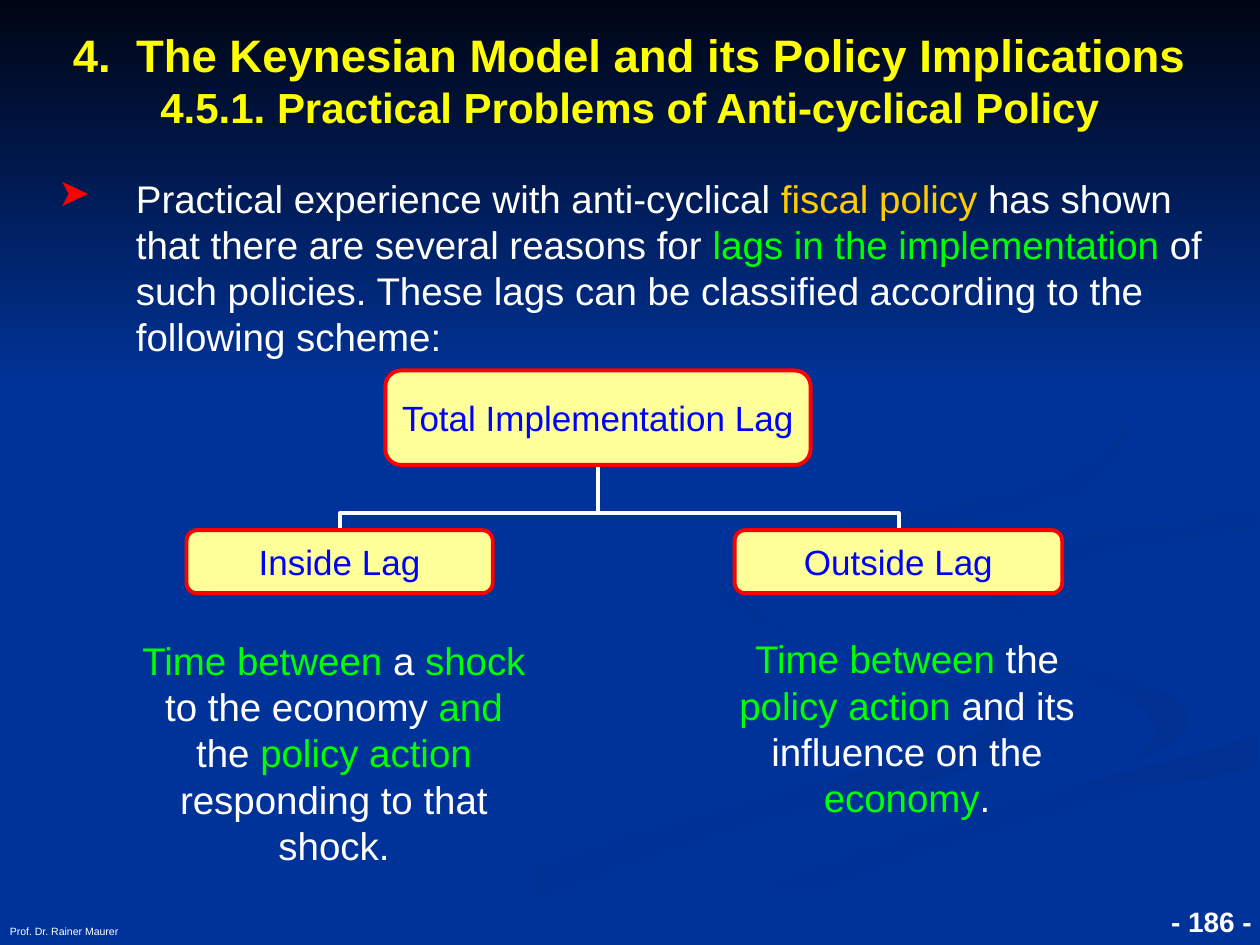
from lxml.etree import SubElement
from pptx import Presentation
from pptx.dml.color import RGBColor
from pptx.enum.shapes import MSO_CONNECTOR as Connector, MSO_SHAPE as Shape
from pptx.enum.text import MSO_ANCHOR as Anchor, PP_ALIGN as Align
from pptx.oxml.ns import qn
from pptx.util import Pt

COLORS = {
    "blue": "003399", "night": "000514", "shade": "003091", "white": "FFFFFF",
    "yellow": "FFFF00", "gold": "FFCC00", "green": "00FF00", "red": "FF0000",
    "cream": "FFFF99", "ink": "0000FF",
}

SWOOSH_EDGE = [(374, 538), (410, 518), (454, 499), (501, 482), (550, 466), (574, 459),
               (624, 446), (674, 433), (703, 425), (719, 418)]
LEFT_TAIL = [
    (562, 398), (545, 391), (526, 384), (491, 374), (462, 365), (442, 357), (428, 349),
    (420, 343), (415, 338), (414, 330), (410, 337), (412, 343), (418, 348), (433, 356),
    (454, 364), (489, 374), (514, 382), (534, 388), (549, 394), (562, 400), (566, 408),
    (562, 417), (552, 423), (532, 431), (503, 438), (469, 446), (417, 460), (359, 476),
    (300, 497), (243, 523), (216, 539), (260, 539), (310, 514), (359, 495), (406, 479),
    (449, 466), (487, 456), (519, 449), (544, 442), (562, 436), (570, 430), (574, 423),
    (576, 418), (572, 408), (566, 400)]
RIGHT_CURL = [
    (679, 410), (676, 405), (670, 398), (652, 389), (626, 382), (598, 374), (570, 366),
    (546, 359), (528, 348), (521, 334), (522, 341), (528, 351), (544, 364), (562, 373),
    (587, 382), (615, 388), (634, 395), (648, 401), (656, 408), (661, 418), (656, 427),
    (644, 436), (660, 430), (671, 424), (678, 418)]
LOWER_BAND = [
    (362, 539), (411, 539), (432, 528), (454, 518), (482, 505), (520, 491), (565, 476),
    (620, 461), (683, 446), (719, 438), *reversed(SWOOSH_EDGE)]
MAIN_BAND = [
    (522, 334), (528, 348), (546, 359), (571, 366), (598, 374), (627, 382), (652, 389),
    (670, 398), (676, 405), (679, 410), (678, 417), (670, 425), (656, 432), (634, 438),
    (607, 445), (562, 456), (507, 472), (446, 492), (379, 521), (343, 539), (362, 539),
    *SWOOSH_EDGE, (719, 387), (690, 382), (651, 374), (611, 362), (588, 354), (572, 346),
    (564, 338), (562, 333), (566, 326), (576, 318), (592, 312), (623, 305), (672, 299),
    (719, 289), (719, 279), (678, 287), (629, 294), (598, 299), (567, 304), (544, 311),
    (527, 321)]
UPPER_BAND = [
    (562, 331), (563, 338), (570, 344), (580, 351), (595, 357), (585, 351), (580, 343),
    (580, 337), (588, 330), (607, 323), (632, 316), (674, 309), (699, 305), (719, 302),
    (719, 289), (672, 299), (623, 305), (592, 312), (576, 318), (566, 326)]
TOP_CURL = [
    (492, 310), (532, 303), (566, 297), (594, 289), (616, 282), (631, 272), (640, 261),
    (644, 248), (641, 233), (634, 221), (622, 210), (607, 198), (583, 184), (562, 174),
    (549, 168), (580, 183), (609, 201), (626, 215), (635, 225), (640, 241), (638, 251),
    (631, 259), (620, 266), (606, 272), (589, 278), (549, 287), (507, 294), (467, 302),
    (443, 309), (424, 318), (416, 328), (418, 341), (429, 351), (448, 360), (437, 353),
    (428, 342), (429, 332), (436, 325), (449, 320), (467, 314)]


def rgb(name):
    """Return the named colour."""
    return RGBColor.from_string(COLORS[name])


def write(paragraph, text, size=22, color="white", bold=False):
    """Add one formatted run to a paragraph."""
    run = paragraph.add_run()
    run.text = text
    run.font.name = "Arial"
    run.font.size = Pt(size)
    run.font.bold = bold
    run.font.color.rgb = rgb(color)


class Canvas:
    """Hold the style and the slide being drawn."""

    def __init__(self, slide):
        self.slide = slide
        self.shapes = slide.shapes
        self.line_width = Pt(2.25)
        background = slide.background.fill
        background.solid()
        background.fore_color.rgb = rgb("blue")

    def paint(self, shape, stops, angle):
        """Fill a lineless shape with a solid colour or a gradient."""
        shape.shadow.inherit = False
        shape.line.fill.background()
        if len(stops) == 1:
            shape.fill.solid()
            shape.fill.fore_color.rgb = rgb(stops[0])
            return
        shape.fill.gradient()
        shape.fill.gradient_angle = 360 - angle
        for stop, name in zip(shape.fill.gradient_stops, stops):
            stop.color.rgb = rgb(name)

    def swoosh(self, points, *stops, angle=0):
        """Draw a closed outline of the backdrop."""
        builder = self.shapes.build_freeform(*points[0], scale=Pt(1))
        builder.add_line_segments(points[1:])
        self.paint(builder.convert_to_shape(), stops, angle)

    def band(self, left, top, width, height, *stops, angle=90):
        """Draw a gradient rectangle."""
        box = map(Pt, (left, top, width, height))
        self.paint(self.shapes.add_shape(Shape.RECTANGLE, *box), stops, angle)

    def text(self, box, align=Align.LEFT, anchor=Anchor.TOP, margins=(7.2, 3.6)):
        """Add a text box and return its first paragraph."""
        frame = self.shapes.add_textbox(*map(Pt, box)).text_frame
        frame.word_wrap = True
        frame.vertical_anchor = anchor
        frame.margin_left = frame.margin_right = Pt(margins[0])
        frame.margin_top = frame.margin_bottom = Pt(margins[1])
        paragraph = frame.paragraphs[0]
        paragraph.alignment = align
        return paragraph

    def bullet(self, paragraph, indent, character, color):
        """Give a paragraph a hanging coloured bullet."""
        properties = paragraph._p.get_or_add_pPr()
        properties.set("marL", str(Pt(indent)))
        properties.set("indent", str(-Pt(indent)))
        bullet_color = SubElement(properties, qn("a:buClr"))
        SubElement(bullet_color, qn("a:srgbClr"), val=COLORS[color])
        SubElement(properties, qn("a:buChar"), char=character)

    def node(self, label, left, top, width, height):
        """Draw a rounded box of the scheme."""
        shape = self.shapes.add_shape(Shape.ROUNDED_RECTANGLE, *map(Pt, (left, top, width, height)))
        shape.shadow.inherit = False
        shape.fill.solid()
        shape.fill.fore_color.rgb = rgb("cream")
        shape.line.color.rgb = rgb("red")
        shape.line.width = self.line_width
        frame = shape.text_frame
        frame.word_wrap = False
        frame.vertical_anchor = Anchor.MIDDLE
        frame.paragraphs[0].alignment = Align.CENTER
        write(frame.paragraphs[0], label, size=20, color="ink")

    def elbow(self, child, parent, bend=0.257):
        """Link a child's top to its parent's bottom with a vertical elbow."""
        middle_x, middle_y = (child[0] + parent[0]) / 2, (child[1] + parent[1]) / 2
        half_width, half_height = (child[1] - parent[1]) / 2, abs(child[0] - parent[0]) / 2
        side = 1 if child[0] > parent[0] else -1
        connector = self.shapes.add_connector(
            Connector.ELBOW,
            Pt(middle_x + side * half_width), Pt(middle_y - half_height),
            Pt(middle_x - side * half_width), Pt(middle_y + half_height))
        connector.line.color.rgb = rgb("white")
        connector.line.width = self.line_width
        properties = connector._element.spPr
        properties.find(qn("a:xfrm")).set("rot", str((90 if side > 0 else 270) * 60000))
        guides = properties.find(qn("a:prstGeom")).get_or_add_avLst()
        SubElement(guides, qn("a:gd"), name="adj1", fmla=f"val {round(bend * 100000)}")
        SubElement(properties, qn("a:effectLst"))


def main():
    """Build the slide and save it."""
    presentation = Presentation()
    presentation.slide_width, presentation.slide_height = Pt(720), Pt(540)
    canvas = Canvas(presentation.slides.add_slide(presentation.slide_layouts[6]))

    canvas.swoosh(LEFT_TAIL, "blue", "shade")
    canvas.swoosh(RIGHT_CURL, "blue", "shade", angle=45)
    canvas.swoosh(LOWER_BAND, "shade", "blue", angle=90)
    canvas.swoosh(MAIN_BAND, "blue")
    canvas.swoosh(UPPER_BAND, "shade", "blue", angle=45)
    canvas.swoosh(TOP_CURL, "shade", "blue", angle=45)
    canvas.band(0, 0, 720, 222, "night", "blue")

    number = canvas.text((554.4, 502, 168, 37.4), Align.RIGHT, Anchor.BOTTOM)
    write(number, "- 186 -", size=16, bold=True)
    author = canvas.text((-1.5, 502, 445, 37.4), anchor=Anchor.BOTTOM)
    write(author, "Prof. Dr. Rainer Maurer", size=6)

    body = canvas.text((26, 96.3, 670.3, 121.7))
    canvas.bullet(body, 44.6, "➤", "red")
    for text, color in [
            ("Practical experience with anti-cyclical ", "white"), ("fiscal policy", "gold"),
            (" has shown that there are several reasons for ", "white"),
            ("lags in the implementation", "green"),
            (" of such policies. These lags can be classified according to the following scheme:",
             "white")]:
        write(body, text, color=color)

    for center in (513.5, 194.5):
        canvas.elbow((center, 302), (341.7, 267))
    canvas.node("Total Implementation Lag", 220.2, 211.7, 243, 54)
    canvas.node("Inside Lag", 106.6, 303, 175, 36)
    canvas.node("Outside Lag", 419.8, 303, 187.2, 36)

    title = canvas.text((0, 2, 720, 86.4), Align.CENTER, Anchor.MIDDLE)
    write(title, "4.  The Keynesian Model and its Policy Implications",
          size=26, color="yellow", bold=True)
    title.add_line_break()
    write(title, "4.5.1. Practical Problems of Anti-cyclical Policy",
          size=24, color="yellow", bold=True)

    definitions = [
        (80.7, 355.5, ["Time between", " a ", "shock", " to the economy ", "and", " the ",
                       "policy action", " responding to that shock."]),
        (408.2, 354.5, ["Time between", " the ", "policy action",
                        " and its influence on the ", "economy", "."])]
    for left, top, pieces in definitions:
        definition = canvas.text((left, top, 220.3, 150), Align.CENTER, margins=(0, 8.6))
        for index, text in enumerate(pieces):
            write(definition, text, color="white" if index % 2 else "green")

    presentation.save("out.pptx")


if __name__ == "__main__":
    main()
